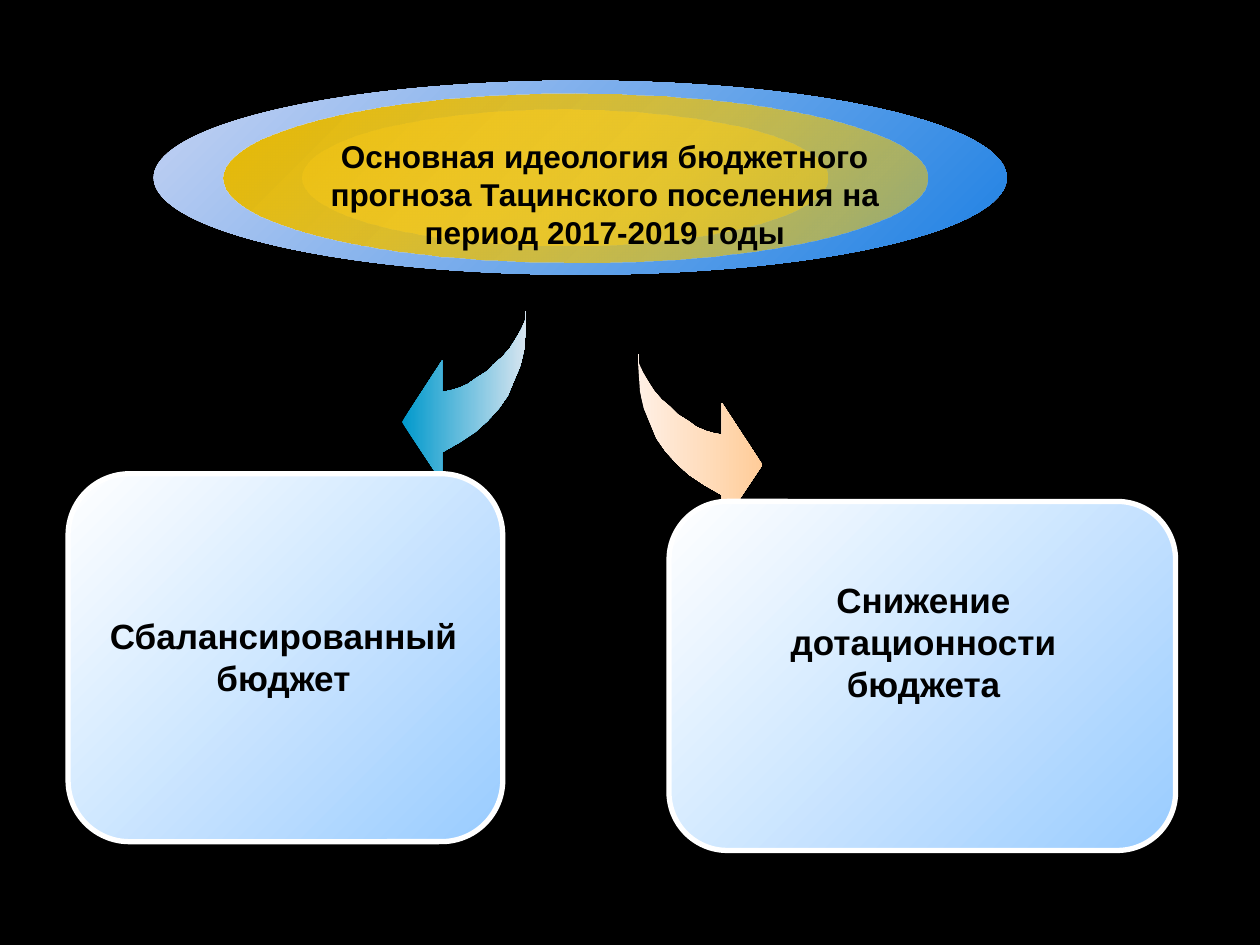
from dataclasses import dataclass

from lxml.etree import SubElement
from pptx import Presentation
from pptx.dml.color import RGBColor
from pptx.enum.shapes import MSO_SHAPE as Preset
from pptx.enum.text import MSO_ANCHOR as Anchor, MSO_AUTO_SIZE as AutoSize, PP_ALIGN as Align
from pptx.oxml.ns import qn
from pptx.shapes.autoshape import Shape
from pptx.slide import Slide
from pptx.util import Emu, Pt

COLUMNS, ROWS = 100, 75
CELL = 91440
TENTHS = 10


@dataclass(frozen=True)
class Theme:
    """Colours and type sizes of the slide."""
    font: str = "Arial"
    title_size: int = 18
    goal_size: int = 20
    border_width: int = 3
    background: str = "000000"
    text: str = "000000"
    shadow: str = "000000"
    border: str = "FFFFFF"
    goal: tuple[str, str] = ("FFFFFF", "99CCFF")
    halo: tuple[str, str] = ("C6D3F3", "1D80E3")
    core: tuple[str, str] = ("FFFFFF", "FFCC00")
    ring: tuple[str, str] = ("E6B800", "FFCC00")
    blue_arrow: tuple[str, str] = ("0099CC", "D8E5F0")
    peach_arrow: tuple[str, str] = ("FFF0E5", "FFCC99")


@dataclass(frozen=True)
class Area:
    """Place on the grid, in columns and rows."""
    column: float
    row: float
    columns: float
    rows: float

    def emu(self) -> tuple[Emu, ...]:
        """Give left, top, width and height."""
        return tuple(Emu(round(cells * CELL))
                     for cells in (self.column, self.row, self.columns, self.rows))


@dataclass(frozen=True)
class Oval:
    """One layer of the headline emblem."""
    area: Area
    colors: tuple[str, str]
    end_opacity: int = 100


@dataclass(frozen=True)
class Arrow:
    """Curved arrow that swings from its tail to one side."""
    column: float
    row: float
    direction: int
    colors: tuple[str, str]


@dataclass(frozen=True)
class Goal:
    """Budget goal: a panel and its wording."""
    panel: Area
    label: Area
    wording: str


THEME = Theme()
HEADLINE = "Основная идеология бюджетного прогноза Тацинского поселения на период 2017-2019 годы"
HEADLINE_AREA = Area(22.4, 10.4, 51.2, 10.1)
OVALS = (
    Oval(Area(12.2, 6.4, 67.7, 15.4), THEME.halo),
    Oval(Area(24, 8.7, 41.7, 10.8), THEME.core, 38),
    Oval(Area(17.7, 7.4, 55.9, 13.4), THEME.ring, 48),
)
ARROWS = (
    Arrow(41.8, 24.7, -1, THEME.blue_arrow),
    Arrow(50.6, 28.1, 1, THEME.peach_arrow),
)
ARROW_OUTLINE = (
    (0, 0), (1, 16), (2, 30), (5, 43), (10, 55), (15, 67), (22, 77), (31, 87), (41, 96),
    (53, 104), (67, 112), (67, 136), (99, 88), (67, 39), (67, 64), (61, 63), (54, 61),
    (47, 58), (40, 53), (32, 48), (26, 42), (19, 36), (13, 29), (8, 21), (4, 14), (1, 7), (1, 0),
)
GOALS = (
    Goal(Area(5.4, 37.6, 34.5, 29.2), Area(5.6, 48.3, 33.8, 7.7), "Сбалансированный бюджет"),
    Goal(Area(53.1, 39.8, 40.2, 27.7), Area(56.5, 45.4, 33.6, 11.1),
         "Снижение дотационности бюджета"),
)


def rgb(color: str) -> RGBColor:
    """Turn a hex value into a colour."""
    return RGBColor.from_string(color)


def paint(shape: Shape, colors: tuple[str, str], angle: int, end_opacity: int = 100) -> None:
    """Fill a shape with a two-colour gradient and drop its line and shadow."""
    shape.shadow.inherit = False
    shape.line.fill.background()
    shape.fill.gradient()
    shape.fill.gradient_angle = angle
    for stop, color in zip(shape.fill.gradient_stops, colors):
        stop.color.rgb = rgb(color)
    if end_opacity < 100:
        end_color = list(shape._element.spPr.iter(qn("a:srgbClr")))[-1]
        SubElement(end_color, qn("a:alpha"), val=str(end_opacity * 1000))


def cast_shadow(shape: Shape) -> None:
    """Give a shape a hard half-transparent shadow to the lower right."""
    effects = shape._element.spPr.find(qn("a:effectLst"))
    shadow = SubElement(effects, qn("a:outerShdw"), dist=str(Pt(8.5)), dir="2700000", algn="ctr",
                        rotWithShape="0")
    color = SubElement(shadow, qn("a:srgbClr"), val=THEME.shadow)
    SubElement(color, qn("a:alpha"), val="50000")


def write(holder: Shape, wording: str, size: int) -> None:
    """Set centred bold wording in a text holder."""
    frame = holder.text_frame
    frame.word_wrap = True
    frame.auto_size = AutoSize.SHAPE_TO_FIT_TEXT
    frame.vertical_anchor = Anchor.TOP
    paragraph = frame.paragraphs[0]
    paragraph.alignment = Align.CENTER
    run = paragraph.add_run()
    run.text = wording
    run.font.name = THEME.font
    run.font.size = Pt(size)
    run.font.bold = True
    run.font.color.rgb = rgb(THEME.text)


def draw_oval(slide: Slide, oval: Oval) -> None:
    """Draw one layer of the emblem."""
    layer = slide.shapes.add_shape(Preset.OVAL, *oval.area.emu())
    paint(layer, oval.colors, 315, oval.end_opacity)


def draw_headline(slide: Slide) -> None:
    """Place the title in front of the emblem."""
    headline = slide.shapes.title
    headline.left, headline.top, headline.width, headline.height = HEADLINE_AREA.emu()
    write(headline, HEADLINE, THEME.title_size)
    slide.shapes._spTree.append(headline._element)


def draw_arrow(slide: Slide, arrow: Arrow) -> None:
    """Draw the shared arrow outline towards the arrow's side."""
    start, *bends = [(round(arrow.column * TENTHS) + arrow.direction * across,
                      round(arrow.row * TENTHS) + down) for across, down in ARROW_OUTLINE]
    builder = slide.shapes.build_freeform(*start, scale=CELL / TENTHS)
    builder.add_line_segments(bends, close=True)
    paint(builder.convert_to_shape(), arrow.colors, 0)


def draw_panel(slide: Slide, goal: Goal) -> None:
    """Draw the rounded panel of a goal."""
    panel = slide.shapes.add_shape(Preset.ROUNDED_RECTANGLE, *goal.panel.emu())
    paint(panel, THEME.goal, 315)
    panel.line.color.rgb = rgb(THEME.border)
    panel.line.width = Pt(THEME.border_width)
    cast_shadow(panel)


def main() -> None:
    """Build and save the slide."""
    deck = Presentation()
    deck.slide_width, deck.slide_height = Emu(COLUMNS * CELL), Emu(ROWS * CELL)
    slide = deck.slides.add_slide(deck.slide_layouts.get_by_name("Title Only"))
    slide.background.fill.solid()
    slide.background.fill.fore_color.rgb = rgb(THEME.background)
    for oval in OVALS:
        draw_oval(slide, oval)
    draw_headline(slide)
    for arrow in ARROWS:
        draw_arrow(slide, arrow)
    for goal in GOALS:
        draw_panel(slide, goal)
    for goal in GOALS:
        write(slide.shapes.add_textbox(*goal.label.emu()), goal.wording, THEME.goal_size)
    deck.save("out.pptx")


if __name__ == "__main__":
    main()
